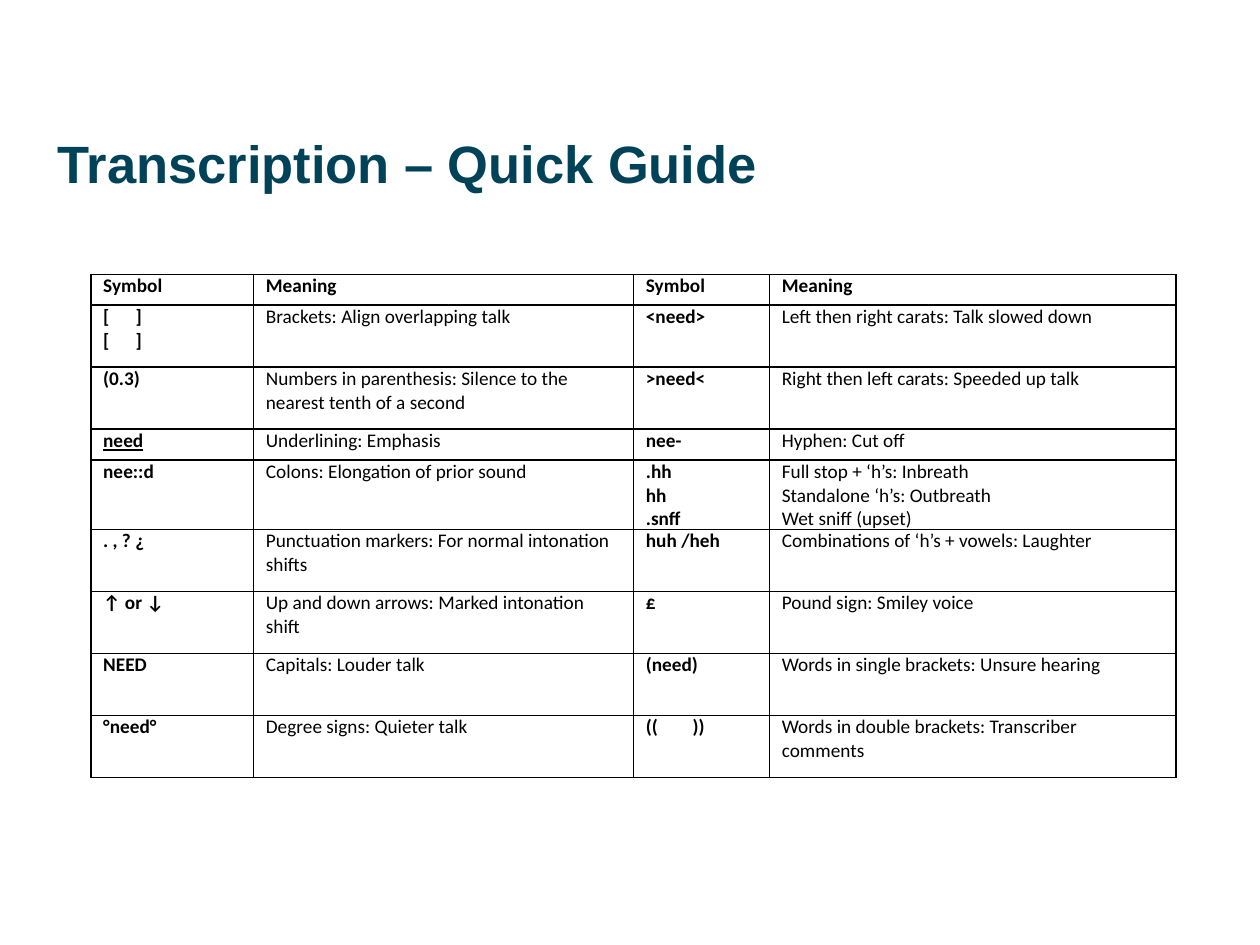
from lxml import etree
from pptx import Presentation
from pptx import util as u
from pptx.dml.color import RGBColor
from pptx.enum import text
from pptx.oxml import ns

COLORS = {"title": "004359", "ink": "000000"}

COLUMN_WIDTHS = [3.28, 7.66, 2.74, 8.2]
SHORT_ROW, TALL_ROW = 0.62, 1.25
SHORT_ROWS = {0, 3}

GUIDE = [
    ("Symbol", "Meaning", "Symbol", "Meaning"),
    ("[      ]\n[      ]", "Brackets: Align overlapping talk",
     "<need>", "Left then right carats: Talk slowed down"),
    ("(0.3)", "Numbers in parenthesis: Silence to the nearest tenth of a second",
     ">need<", "Right then left carats: Speeded up talk"),
    ("need", "Underlining: Emphasis", "nee-", "Hyphen: Cut off"),
    ("nee::d", "Colons: Elongation of prior sound", ".hh\nhh\n.snff",
     "Full stop + ‘h’s: Inbreath\nStandalone ‘h’s: Outbreath\nWet sniff (upset)"),
    (". , ? ¿", "Punctuation markers: For normal intonation shifts",
     "huh /heh", "Combinations of ‘h’s + vowels: Laughter"),
    ("↑ or ↓", "Up and down arrows: Marked intonation shift",
     "£", "Pound sign: Smiley voice"),
    ("NEED", "Capitals: Louder talk",
     "(need)", "Words in single brackets: Unsure hearing"),
    ("°need°", "Degree signs: Quieter talk",
     "((        ))", "Words in double brackets: Transcriber comments"),
]


def write(frame, words, font="Calibri", size=11, color="ink", bold=False,
          underline=False):
    """Fill a text frame, one paragraph for each line of words."""
    frame.word_wrap = True
    for index, line in enumerate(words.split("\n")):
        paragraph = frame.paragraphs[0] if index == 0 else frame.add_paragraph()
        run = paragraph.add_run()
        run.text = line
        run.font.name = font
        run.font.size = u.Pt(size)
        run.font.bold = bold
        run.font.underline = underline
        run.font.color.rgb = RGBColor.from_string(COLORS[color])


def add_borders(cell, width=1):
    properties = cell._tc.get_or_add_tcPr()
    for side in ("a:lnL", "a:lnR", "a:lnT", "a:lnB"):
        border = etree.SubElement(properties, ns.qn(side), w=str(u.Pt(width)))
        fill = etree.SubElement(border, ns.qn("a:solidFill"))
        etree.SubElement(fill, ns.qn("a:srgbClr"), val=COLORS["ink"])


def add_title(slide, words):
    title = slide.shapes.add_textbox(u.Cm(0.91), u.Cm(2.51), u.Cm(23.57), u.Cm(3.61))
    title.text_frame.vertical_anchor = text.MSO_ANCHOR.TOP
    write(title.text_frame, words, font="Arial", size=30, color="title", bold=True)


def add_guide(slide):
    heights = [SHORT_ROW if row in SHORT_ROWS else TALL_ROW
               for row in range(len(GUIDE))]
    table = slide.shapes.add_table(
        len(GUIDE), len(COLUMN_WIDTHS), u.Cm(1.83), u.Cm(5.53),
        u.Cm(sum(COLUMN_WIDTHS)), u.Cm(sum(heights))).table
    table.first_row = table.horz_banding = False
    for column, width in zip(table.columns, COLUMN_WIDTHS):
        column.width = u.Cm(width)
    for row, height in zip(table.rows, heights):
        row.height = u.Cm(height)
    for r, entries in enumerate(GUIDE):
        for c, words in enumerate(entries):
            cell = table.cell(r, c)
            cell.margin_left = cell.margin_right = u.Cm(0.25)
            cell.margin_top = cell.margin_bottom = 0
            add_borders(cell)
            cell.fill.background()
            write(cell.text_frame, words, bold=r == 0 or c % 2 == 0,
                  underline=words == "need")


def main():
    deck = Presentation()
    deck.slide_width, deck.slide_height = u.Cm(25.4), u.Cm(19.05)
    slide = deck.slides.add_slide(deck.slide_layouts[6])
    add_title(slide, "Transcription – Quick Guide")
    add_guide(slide)
    deck.save("out.pptx")


if __name__ == "__main__":
    main()
